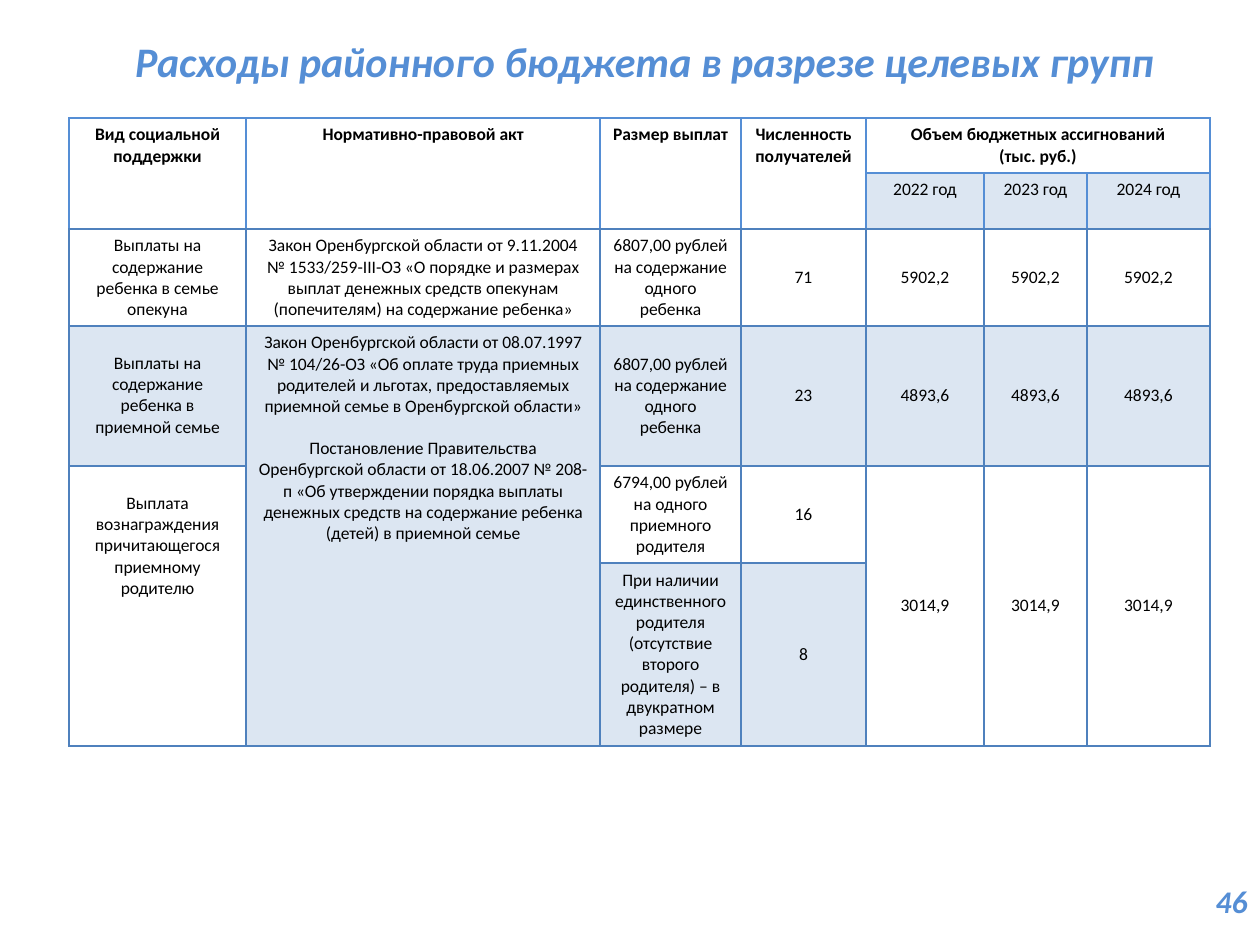
from dataclasses import dataclass

from lxml.etree import SubElement
from pptx import Presentation
from pptx.dml.color import RGBColor
from pptx.enum.text import MSO_ANCHOR, PP_ALIGN
from pptx.oxml.ns import qn
from pptx.util import Emu, Pt


@dataclass(frozen=True)
class Theme:
    font: str = "Calibri"
    accent: str = "558ED5"
    line: str = "4F81BD"
    band: str = "DCE6F2"
    text: str = "000000"
    title_size: int = 24
    number_size: int = 18
    table_size: int = 10
    gap: int = 12


THEME = Theme()
TOP, MIDDLE = MSO_ANCHOR.TOP, MSO_ANCHOR.MIDDLE

COLS = [177, 354, 141, 125, 118, 103, 123]
ROWS = [55, 56, 97, 140, 97, 183]
HEADER_ROWS = 2
MERGES = [(0, c, 1, c) for c in range(4)] + [(0, 4, 0, 6), (3, 1, 5, 1), (4, 0, 5, 0)]
MERGES += [(4, c, 5, c) for c in range(4, 7)]
BANDED = {(1, c) for c in range(4, 7)} | {(3, c) for c in range(7)} | {(5, 2), (5, 3)}
LOWERED = {(3, 0), (4, 0)}

CHILD_PAY = "6807,00 рублей на содержание одного ребенка"
CELLS = [
    ["Вид социальной поддержки", "Нормативно-правовой акт", "Размер выплат",
     "Численность получателей", "Объем бюджетных ассигнований\n(тыс. руб.)", "", ""],
    ["", "", "", "", "2022 год", "2023 год", "2024 год"],
    ["Выплаты на содержание ребенка в семье опекуна",
     "Закон Оренбургской области от 9.11.2004 № 1533/259-III-ОЗ «О порядке и размерах "
     "выплат денежных средств опекунам (попечителям) на содержание ребенка»",
     CHILD_PAY, "71"] + ["5902,2"] * 3,
    ["Выплаты на содержание ребенка в приемной семье",
     "Закон Оренбургской области от 08.07.1997 № 104/26-ОЗ «Об оплате труда приемных "
     "родителей и льготах, предоставляемых приемной семье в Оренбургской области»\n"
     "Постановление Правительства Оренбургской области от 18.06.2007 № 208-п «Об утверждении "
     "порядка выплаты денежных средств на содержание ребенка (детей) в приемной семье",
     CHILD_PAY, "23"] + ["4893,6"] * 3,
    ["Выплата вознаграждения причитающегося приемному родителю", "",
     "6794,00 рублей на одного приемного родителя", "16"] + ["3014,9"] * 3,
    ["", "", "При наличии единственного родителя (отсутствие второго родителя) – "
     "в двукратном размере", "8", "", "", ""],
]


def px(n):
    return Emu(round(n * 914400 / 126))


def write(tf, text, size, color, bold=False, italic=False, align=PP_ALIGN.CENTER, gap=0):
    for i, line in enumerate(text.split("\n")):
        p = tf.paragraphs[0] if i == 0 else tf.add_paragraph()
        p.alignment = align
        if i:
            p.space_before = Pt(gap)
        r = p.add_run()
        r.text = line
        r.font.name = THEME.font
        r.font.size = Pt(size)
        r.font.bold = bold
        r.font.italic = italic
        r.font.color.rgb = RGBColor.from_string(color)


def add_heading(slide, box, text, size, align, anchor, wrap):
    tf = slide.shapes.add_textbox(*map(px, box)).text_frame
    tf.word_wrap = wrap
    tf.vertical_anchor = anchor
    write(tf, text, size, THEME.accent, bold=True, italic=True, align=align)


def set_borders(cell, color):
    tcPr = cell._tc.get_or_add_tcPr()
    for side in ("lnL", "lnR", "lnT", "lnB"):
        ln = SubElement(tcPr, qn(f"a:{side}"), w=str(Pt(1)))
        SubElement(SubElement(ln, qn("a:solidFill")), qn("a:srgbClr"), val=color)


def format_cell(cell, row, col):
    header = row < HEADER_ROWS
    set_borders(cell, THEME.accent if header else THEME.line)
    if (row, col) in BANDED:
        cell.fill.solid()
        cell.fill.fore_color.rgb = RGBColor.from_string(THEME.band)
    else:
        cell.fill.background()
    cell.vertical_anchor = TOP if header or col < 2 else MIDDLE
    if (row, col) in LOWERED:
        cell.margin_top = px(27)
    text = CELLS[row][col]
    if text:
        write(cell.text_frame, text, THEME.table_size, THEME.text,
              bold=row == 0, gap=0 if header else THEME.gap)


def add_budget_table(slide, left, top):
    box = (left, top, sum(COLS), sum(ROWS))
    table = slide.shapes.add_table(len(ROWS), len(COLS), *map(px, box)).table
    table.first_row = table.horz_banding = False
    for column, width in zip(table.columns, COLS):
        column.width = px(width)
    for row, height in zip(table.rows, ROWS):
        row.height = px(height)
    for r1, c1, r2, c2 in MERGES:
        table.cell(r1, c1).merge(table.cell(r2, c2))
    for row in range(len(ROWS)):
        for col in range(len(COLS)):
            format_cell(table.cell(row, col), row, col)


def main():
    prs = Presentation()
    prs.slide_width, prs.slide_height = px(1260), px(945)
    slide = prs.slides.add_slide(prs.slide_layouts[6])
    add_heading(slide, (966, 876, 294, 50), "46", THEME.number_size,
                PP_ALIGN.RIGHT, MIDDLE, True)
    add_budget_table(slide, 69, 118)
    add_heading(slide, (118, 29, 1053, 63), "Расходы районного бюджета в разрезе целевых групп",
                THEME.title_size, PP_ALIGN.CENTER, TOP, False)
    prs.save("out.pptx")


if __name__ == "__main__":
    main()
